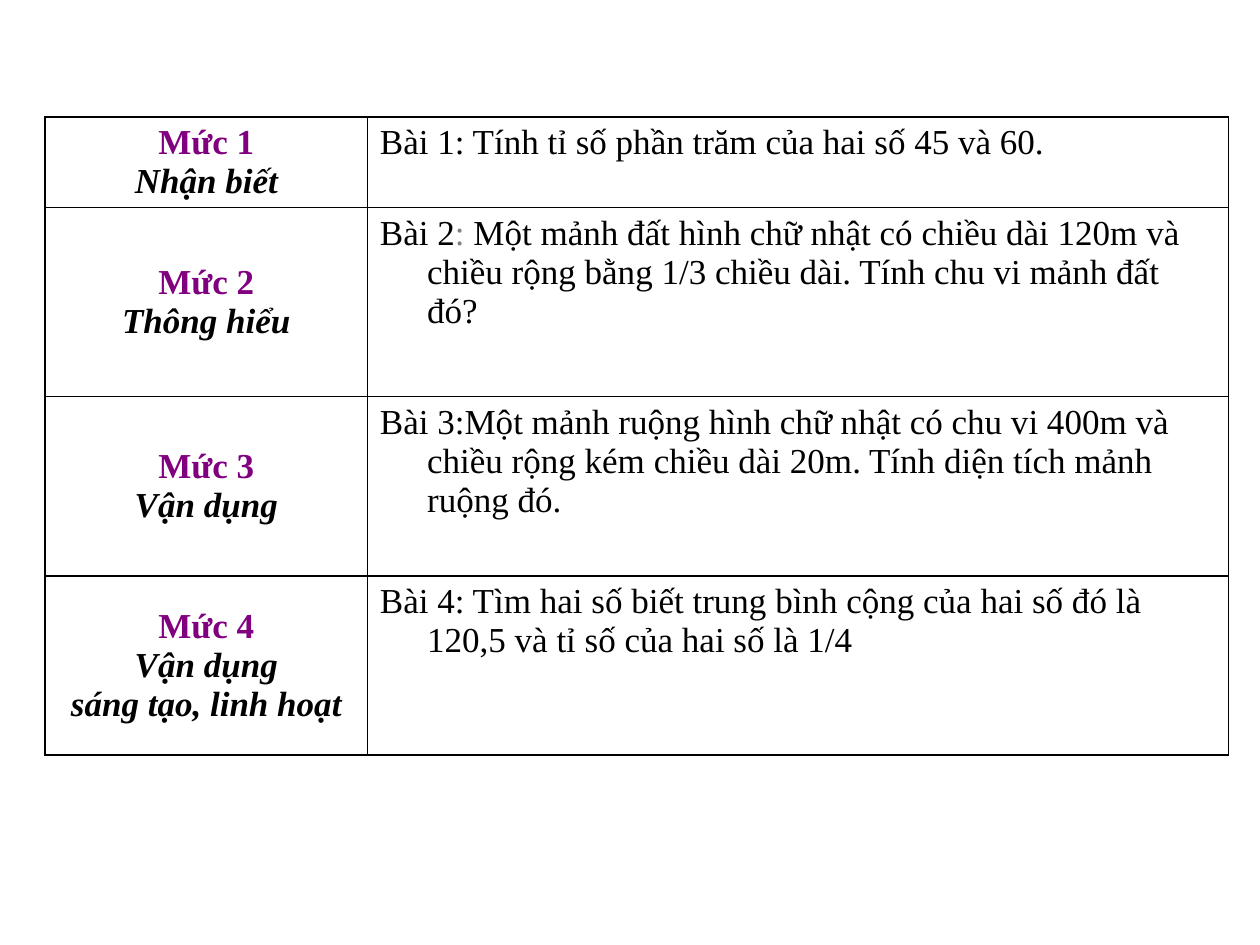
from lxml.etree import SubElement
from pptx import Presentation
from pptx.dml.color import RGBColor
from pptx.enum.text import MSO_ANCHOR, PP_ALIGN
from pptx.oxml.ns import qn
from pptx.util import Cm, Pt

# Content: (level, description lines, exercise as (text, colour name) runs)
LEVELS = [
    ("Mức 1", ["Nhận biết"],
     [("Bài 1: Tính tỉ số phần trăm của hai số 45 và 60.", "text")]),
    ("Mức 2", ["Thông hiểu"],
     [("Bài 2", "text"), (": ", "muted"),
      ("Một mảnh đất hình chữ nhật có chiều dài 120m và chiều rộng bằng 1/3 "
       "chiều dài. Tính chu vi mảnh đất đó?", "text")]),
    ("Mức 3", ["Vận dụng"],
     [("Bài 3:Một mảnh ruộng hình chữ nhật có chu vi 400m và chiều rộng kém "
       "chiều dài 20m. Tính diện tích mảnh ruộng đó.", "text")]),
    ("Mức 4", ["Vận dụng", "sáng tạo, linh hoạt"],
     [("Bài 4: Tìm hai số biết trung bình cộng của hai số đó là 120,5 và "
       "tỉ số của hai số là 1/4", "text")]),
]

THEME = {
    "font": "Times New Roman",
    "size": Pt(20),
    "border": Pt(1),
    "colors": {"text": "000000", "level": "800080", "muted": "808080"},
}

LEFT, TOP = Cm(0.91), Cm(2.36)
COLUMN_WIDTHS = [Cm(6.5), Cm(17.35)]
ROW_HEIGHTS = [Cm(1.57), Cm(3.81), Cm(3.61), Cm(3.61)]
HANGING = Cm(0.95)
MARGINS = {"margin_left": Cm(0.25), "margin_right": Cm(0.25),
           "margin_top": Cm(0.13), "margin_bottom": Cm(0.13)}


def set_values(target, values):
    for name, value in values.items():
        setattr(target, name, value)


def format_cell(cell, anchor):
    set_values(cell, {**MARGINS, "vertical_anchor": anchor})
    properties = cell._tc.get_or_add_tcPr()
    for side in ("a:lnL", "a:lnR", "a:lnT", "a:lnB"):
        line = SubElement(properties, qn(side), w=str(THEME["border"]))
        fill = SubElement(line, qn("a:solidFill"))
        SubElement(fill, qn("a:srgbClr"), val=THEME["colors"]["text"])
    cell.fill.background()


def write_cell(cell, paragraphs, alignment):
    """Each paragraph is a list of (text, colour name, bold, italic) runs."""
    frame = cell.text_frame
    for index, runs in enumerate(paragraphs):
        paragraph = frame.add_paragraph() if index else frame.paragraphs[0]
        paragraph.alignment = alignment
        indents = paragraph._p.get_or_add_pPr()
        indents.set("marL", str(HANGING))
        indents.set("indent", str(-HANGING))
        for text, color, bold, italic in runs:
            run = paragraph.add_run()
            run.text = text
            set_values(run.font, {"name": THEME["font"], "size": THEME["size"],
                                  "bold": bold, "italic": italic})
            run.font.color.rgb = RGBColor.from_string(THEME["colors"][color])


def main():
    presentation = Presentation()
    set_values(presentation, {"slide_width": Cm(25.4), "slide_height": Cm(19.05)})
    slide = presentation.slides.add_slide(presentation.slide_layouts[6])

    # Table grid
    table = slide.shapes.add_table(
        len(LEVELS), len(COLUMN_WIDTHS), LEFT, TOP,
        sum(COLUMN_WIDTHS), sum(ROW_HEIGHTS)).table
    set_values(table, {"first_row": False, "horz_banding": False})
    for column, width in zip(table.columns, COLUMN_WIDTHS):
        column.width = width
    for row, height in zip(table.rows, ROW_HEIGHTS):
        row.height = height

    # One row per level: name and description, then exercise
    for row, (level, descriptions, exercise) in zip(table.rows, LEVELS):
        level_cell, exercise_cell = row.cells
        format_cell(level_cell, MSO_ANCHOR.MIDDLE)
        format_cell(exercise_cell, MSO_ANCHOR.TOP)
        write_cell(level_cell,
                   [[(level, "level", True, False)]]
                   + [[(line, "text", True, True)] for line in descriptions],
                   PP_ALIGN.CENTER)
        write_cell(exercise_cell,
                   [[(text, color, False, False) for text, color in exercise]],
                   PP_ALIGN.LEFT)

    presentation.save("out.pptx")


if __name__ == "__main__":
    main()
